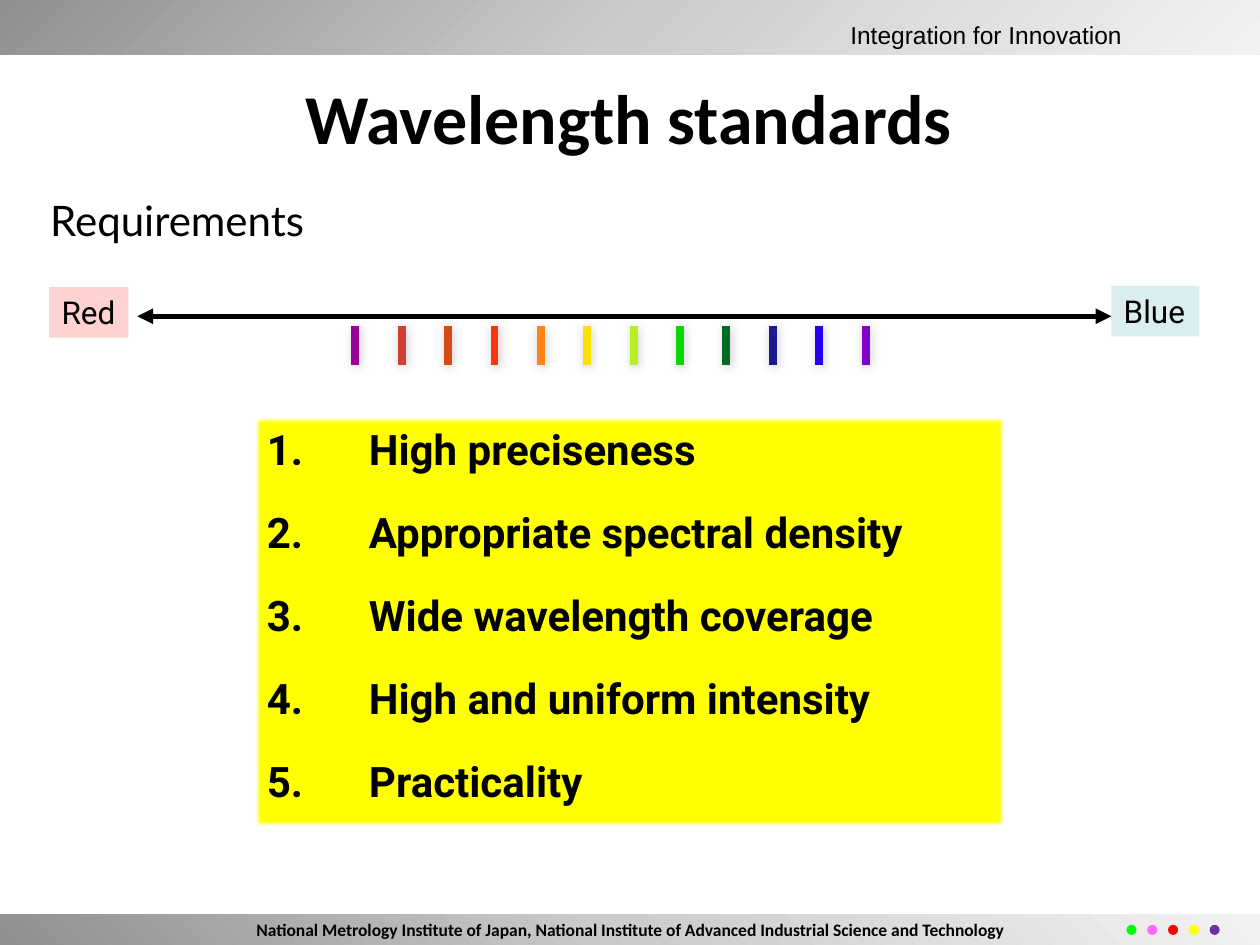
import lxml.etree
import pptx
import pptx.dml.color
import pptx.enum.shapes
import pptx.enum.text
import pptx.oxml.ns
import pptx.util

Inches = pptx.util.Inches
Pt = pptx.util.Pt
Shape = pptx.enum.shapes.MSO_SHAPE
Line = pptx.enum.shapes.MSO_CONNECTOR
Align = pptx.enum.text.PP_ALIGN
Anchor = pptx.enum.text.MSO_ANCHOR

TITLE = "Wavelength standards"
HEADING = "Requirements"
MOTTO = "Integration for Innovation"
FOOTER = ("National Metrology Institute of Japan, "
          "National Institute of Advanced Industrial Science and Technology")
NEEDS = ["High preciseness", "Appropriate spectral density",
         "Wide wavelength coverage", "High and uniform intensity",
         "Practicality"]
ENDS = [("Red", "FFD1D1", (0.39, 2.28, 0.63, 0.4)),
        ("Blue", "DAEDEF", (8.82, 2.27, 0.7, 0.4))]
TICKS = ["990099", "CE4132", "D44B14", "F5390D", "FA8418", "FCDF06",
         "B5F022", "0DD503", "026A25", "1B1B8F", "2300F4", "8204C8"]
DOTS = ["00FF00", "FF66FF", "FF0000", "FFFF00", "7030A0"]

THEME = {
    "ink": "000000",
    "panel": "FFFF00",
    "bar": [(0, "909090"), (50, "CCCCCC"), (100, "F2F2F2")],
    "title": ("Calibri", 40, True),
    "heading": ("Lato", 24, False),
    "list": ("Roboto", 24, True),
    "label": ("Roboto", 18, False),
    "motto": ("Arial", 14, False),
    "footer": ("Calibri", 10, True),
}


def color(code):
    return pptx.dml.color.RGBColor.from_string(code)


def add_node(parent, tag, **attrs):
    node = lxml.etree.SubElement(parent, pptx.oxml.ns.qn("a:" + tag))
    for key, value in attrs.items():
        node.set(key, str(value))
    return node


def spread(first, last, count):
    return [first + (last - first) * i / (count - 1) for i in range(count)]


def add_run(para, text, style):
    run = para.add_run()
    run.text = text
    run.font.name, size, run.font.bold = THEME[style]
    run.font.size = Pt(size)
    run.font.color.rgb = color(THEME["ink"])


def set_text(shape, text, style, align=Align.LEFT, anchor=Anchor.TOP, wrap=True):
    frame = shape.text_frame
    frame.word_wrap = wrap
    frame.vertical_anchor = anchor
    para = frame.paragraphs[0]
    para.alignment = align
    add_run(para, text, style)
    return para


def add_box(shapes, kind, place, fill=None):
    box = shapes.add_shape(kind, *map(Inches, place))
    box.shadow.inherit = False
    box.line.fill.background()
    if fill:
        box.fill.solid()
        box.fill.fore_color.rgb = color(fill)
    return box


def add_bar(shapes, place, angle):
    bar = add_box(shapes, Shape.RECTANGLE, place)
    bar.fill.gradient()
    grad = bar._element.spPr.find(pptx.oxml.ns.qn("a:gradFill"))
    for child in list(grad):
        grad.remove(child)
    stops = add_node(grad, "gsLst")
    for spot, code in THEME["bar"]:
        add_node(add_node(stops, "gs", pos=spot * 1000), "srgbClr", val=code)
    add_node(grad, "lin", ang=angle * 60000, scaled=0)
    return bar


def add_line(shapes, start, end, code, width):
    line = shapes.add_connector(Line.STRAIGHT, *map(Inches, start + end))
    line.line.color.rgb = color(code)
    line.line.width = Pt(width)
    return line, add_node(line._element.spPr, "effectLst")


def add_frame(slide):
    shapes = slide.shapes
    add_bar(shapes, (0, -0.01, 10, 0.44), 45)
    motto = shapes.add_textbox(*map(Inches, (6.65, 0.11, 2.5, 0.34)))
    set_text(motto, MOTTO, "motto", wrap=False)
    foot = add_bar(shapes, (0, 7.26, 10, 0.24), 315)
    set_text(foot, FOOTER, "footer", Align.CENTER, Anchor.MIDDLE)
    group = shapes.add_group_shape()
    for left, code in zip(spread(8.94, 9.6, len(DOTS)), DOTS):
        add_box(group.shapes, Shape.OVAL, (left, 7.34, 0.08, 0.08), code)


def add_scale(slide):
    shapes = slide.shapes
    for text, fill, place in ENDS:
        box = add_box(shapes, Shape.RECTANGLE, place, fill)
        set_text(box, text, "label", wrap=False)
    arrow, _ = add_line(shapes, (1.09, 2.51), (8.82, 2.51), THEME["ink"], 3)
    for tag in ("headEnd", "tailEnd"):
        add_node(arrow.line._get_or_add_ln(), tag, type="triangle")
    group = shapes.add_group_shape()
    for left, code in zip(spread(2.82, 6.87, len(TICKS)), TICKS):
        _, effects = add_line(group.shapes, (left, 2.59), (left, 2.9), code, 4.5)
        shade = add_node(effects, "outerShdw", blurRad=Pt(6), dist=Pt(1),
                         dir=45 * 60000, algn="tl", rotWithShape=0)
        tint = add_node(shade, "srgbClr", val=THEME["ink"])
        add_node(tint, "alpha", val=20000)


def add_list(slide):
    box = add_box(slide.shapes, Shape.RECTANGLE, (2.02, 3.31, 5.96, 3.26),
                  THEME["panel"])
    effects = box._element.spPr.find(pptx.oxml.ns.qn("a:effectLst"))
    add_node(effects, "softEdge", rad=Pt(2.5))
    frame = box.text_frame
    frame.word_wrap = True
    frame.vertical_anchor = Anchor.TOP
    for i, need in enumerate(NEEDS):
        para = frame.add_paragraph() if i else frame.paragraphs[0]
        props = para._p.get_or_add_pPr()
        props.set("marL", str(Inches(0.81)))
        props.set("indent", str(Inches(-0.81)))
        add_node(props, "buFont", typeface="+mj-lt")
        add_node(props, "buAutoNum", type="arabicPeriod")
        para.alignment = Align.LEFT
        para.space_before = Pt(12.6 if i else 0)
        para.space_after = Pt(6)
        add_run(para, need, "list")


def add_heads(slide):
    title = slide.shapes.title
    title.left, title.top, title.width, title.height = map(
        Inches, (1.28, 0.61, 7.42, 0.71))
    para = set_text(title, TITLE, "title", Align.CENTER, Anchor.MIDDLE)
    para.line_spacing = 0.9
    head = slide.shapes.add_textbox(*map(Inches, (0.3, 1.39, 3.15, 0.71)))
    set_text(head, HEADING, "heading", anchor=Anchor.MIDDLE)


def main():
    deck = pptx.Presentation()
    deck.slide_width, deck.slide_height = Inches(10), Inches(7.5)
    slide = deck.slides.add_slide(deck.slide_layouts[5])
    add_frame(slide)
    add_scale(slide)
    add_list(slide)
    add_heads(slide)
    deck.save("out.pptx")


if __name__ == "__main__":
    main()
